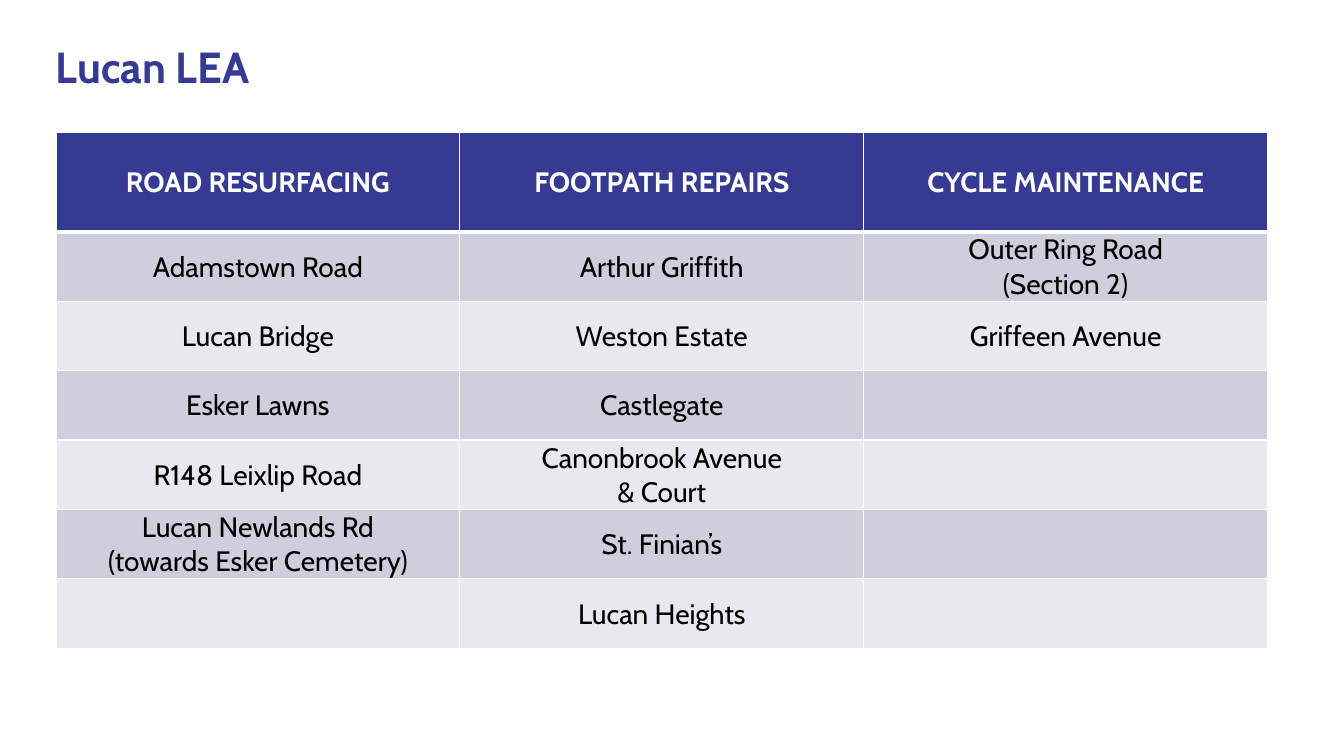
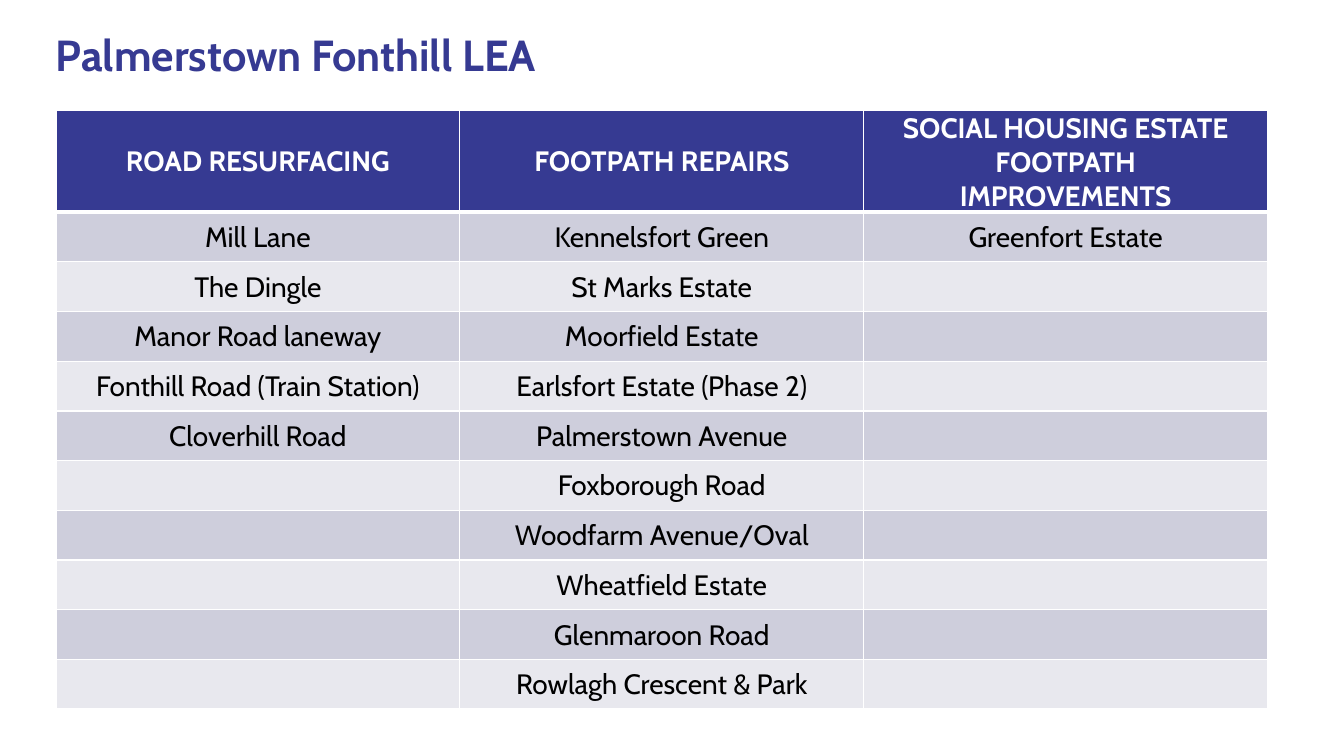
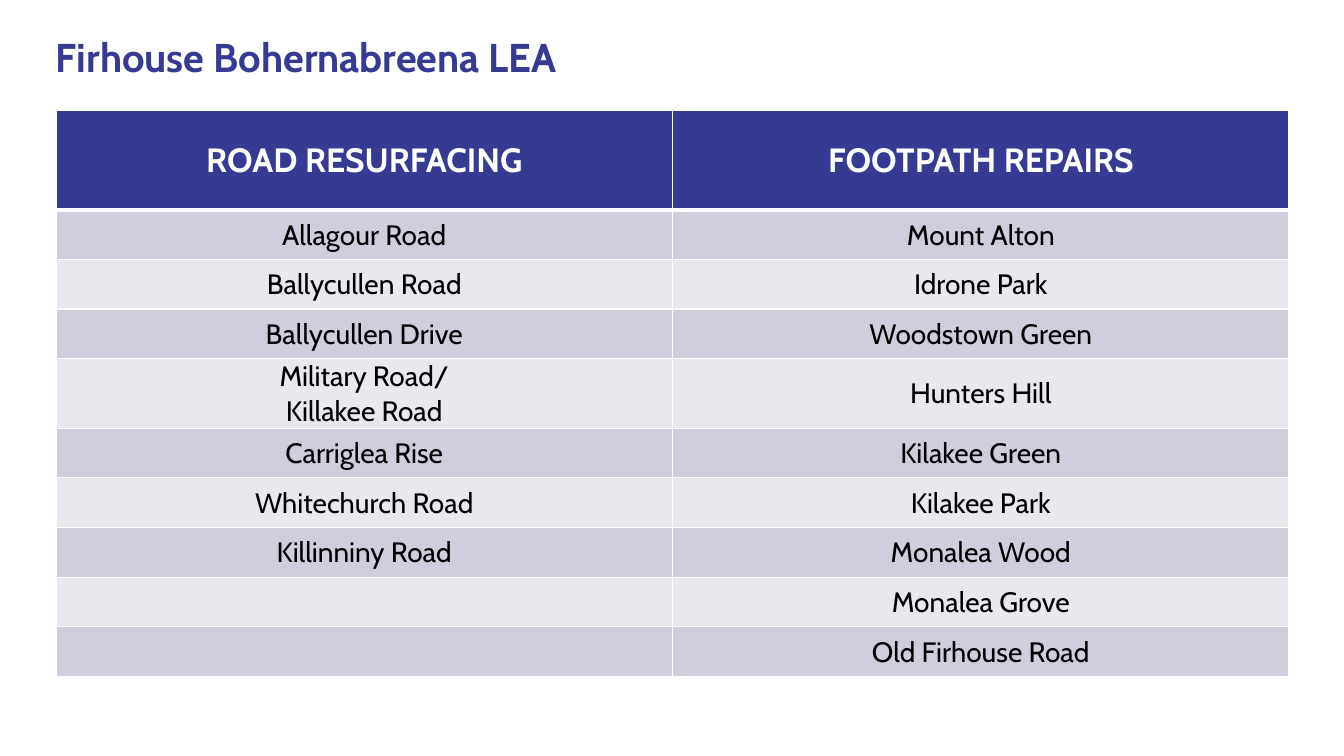
from itertools import zip_longest

from lxml.etree import SubElement
from pptx import Presentation
from pptx.dml.color import RGBColor
from pptx.enum.text import MSO_ANCHOR, PP_ALIGN
from pptx.oxml.ns import qn
from pptx.util import Pt

COLORS = {
    "navy": "363A92",
    "white": "FFFFFF",
    "black": "000000",
    "dark_band": "CECEDC",
    "light_band": "E8E8EE",
}
FONT = "Cabin"
LEFT = 40
HEADER_HEIGHT = 71
LINE_HEIGHT = 24.8
TITLE_SIZE = (440, 67.6)
BODY_SIZE = 20
CELL_FORMAT = {
    "vertical_anchor": MSO_ANCHOR.MIDDLE,
    "margin_left": Pt(0.72),
    "margin_right": Pt(0.72),
    "margin_top": Pt(0.72),
    "margin_bottom": 0,
}

AREAS = [
    {
        "title": "Lucan LEA",
        "title_size": 31,
        "title_top": 15.8,
        "title_inset": 0,
        "table_top": 94.6,
        "column_width": 288.5,
        "row_height": 49.6,
        "header_size": 20,
        "columns": {
            "ROAD RESURFACING": [
                "Adamstown Road", "Lucan Bridge", "Esker Lawns", "R148 Leixlip Road",
                "Lucan Newlands Rd\n(towards Esker Cemetery)",
            ],
            "FOOTPATH REPAIRS": [
                "Arthur Griffith", "Weston Estate", "Castlegate",
                "Canonbrook Avenue\n& Court", "St. Finian’s", "Lucan Heights",
            ],
            "CYCLE MAINTENANCE": ["Outer Ring Road\n(Section 2)", "Griffeen Avenue"],
        },
    },
    {
        "title": "Palmerstown Fonthill LEA",
        "title_size": 31,
        "title_top": 26,
        "title_inset": 37,
        "table_top": 78.8,
        "column_width": 288.5,
        "row_height": 35.5,
        "header_size": 20,
        "columns": {
            "ROAD RESURFACING": [
                "Mill Lane", "The Dingle", "Manor Road laneway",
                "Fonthill Road (Train Station)", "Cloverhill Road",
            ],
            "FOOTPATH REPAIRS": [
                "Kennelsfort Green", "St Marks Estate", "Moorfield Estate",
                "Earlsfort Estate (Phase 2)", "Palmerstown Avenue", "Foxborough Road",
                "Woodfarm Avenue/Oval", "Wheatfield Estate", "Glenmaroon Road",
                "Rowlagh Crescent & Park",
            ],
            "SOCIAL HOUSING ESTATE FOOTPATH\nIMPROVEMENTS": ["Greenfort Estate"],
        },
    },
    {
        "title": "Firhouse Bohernabreena LEA",
        "title_size": 28.7,
        "title_top": 26,
        "title_inset": 34,
        "table_top": 78.8,
        "column_width": 440.4,
        "row_height": 35.5,
        "header_size": 24,
        "columns": {
            "ROAD RESURFACING": [
                "Allagour Road", "Ballycullen Road", "Ballycullen Drive",
                "Military Road/\nKillakee Road", "Carriglea Rise", "Whitechurch Road",
                "Killinniny Road",
            ],
            "FOOTPATH REPAIRS": [
                "Mount Alton", "Idrone Park", "Woodstown Green", "Hunters Hill",
                "Kilakee Green", "Kilakee Park", "Monalea Wood", "Monalea Grove",
                "Old Firhouse Road",
            ],
        },
    },
]


def set_attributes(target, values):
    for name, value in values.items():
        setattr(target, name, value)


def style_font(paragraph, size, color, bold):
    set_attributes(paragraph.font, {"name": FONT, "size": Pt(size), "bold": bold})
    paragraph.font.color.rgb = RGBColor.from_string(COLORS[color])


def add_title(slide, area):
    width, height = TITLE_SIZE
    shape = slide.shapes.add_textbox(Pt(LEFT), Pt(area["title_top"]), Pt(width), Pt(height))
    set_attributes(shape.text_frame, {
        "word_wrap": True,
        "vertical_anchor": MSO_ANCHOR.MIDDLE,
        "margin_left": 0,
        "margin_right": 0,
        "margin_top": 0,
        "margin_bottom": Pt(area["title_inset"]),
        "text": area["title"],
    })
    paragraph = shape.text_frame.paragraphs[0]
    set_attributes(paragraph, {"line_spacing": 0.9, "space_after": Pt(6)})
    style_font(paragraph, area["title_size"], "navy", True)


def add_borders(cell, row_index):
    widths = {
        "a:lnL": 1,
        "a:lnR": 1,
        "a:lnT": 3 if row_index == 1 else 1,
        "a:lnB": 3 if row_index == 0 else 1,
    }
    properties = cell._tc.get_or_add_tcPr()
    for tag, width in widths.items():
        line = SubElement(properties, qn(tag), w=str(Pt(width)))
        fill = SubElement(line, qn("a:solidFill"))
        SubElement(fill, qn("a:srgbClr"), val=COLORS["white"])


def fill_cell(cell, text, row_index, header_size):
    is_header = row_index == 0
    band = "navy" if is_header else "dark_band" if row_index % 2 else "light_band"
    set_attributes(cell, CELL_FORMAT)
    add_borders(cell, row_index)
    cell.fill.solid()
    cell.fill.fore_color.rgb = RGBColor.from_string(COLORS[band])
    cell.text = text
    for paragraph in cell.text_frame.paragraphs:
        paragraph.alignment = PP_ALIGN.CENTER
        style_font(paragraph, header_size if is_header else BODY_SIZE,
                   "white" if is_header else "black", is_header)


def add_works_table(slide, area):
    columns = area["columns"]
    rows = [tuple(columns), *zip_longest(*columns.values(), fillvalue="")]
    heights = [HEADER_HEIGHT] + [
        max(area["row_height"], LINE_HEIGHT * max(text.count("\n") + 1 for text in row))
        for row in rows[1:]
    ]
    table = slide.shapes.add_table(
        len(rows), len(columns), Pt(LEFT), Pt(area["table_top"]),
        Pt(area["column_width"] * len(columns)), Pt(sum(heights)),
    ).table
    for column in table.columns:
        column.width = Pt(area["column_width"])
    for row_index, (row, height) in enumerate(zip(rows, heights)):
        table.rows[row_index].height = Pt(height)
        for column_index, text in enumerate(row):
            fill_cell(table.cell(row_index, column_index), text, row_index, area["header_size"])


def main():
    presentation = Presentation()
    set_attributes(presentation, {"slide_width": Pt(960), "slide_height": Pt(540)})
    for area in AREAS:
        slide = presentation.slides.add_slide(presentation.slide_layouts[6])
        add_title(slide, area)
        add_works_table(slide, area)
    presentation.save("out.pptx")


if __name__ == "__main__":
    main()
